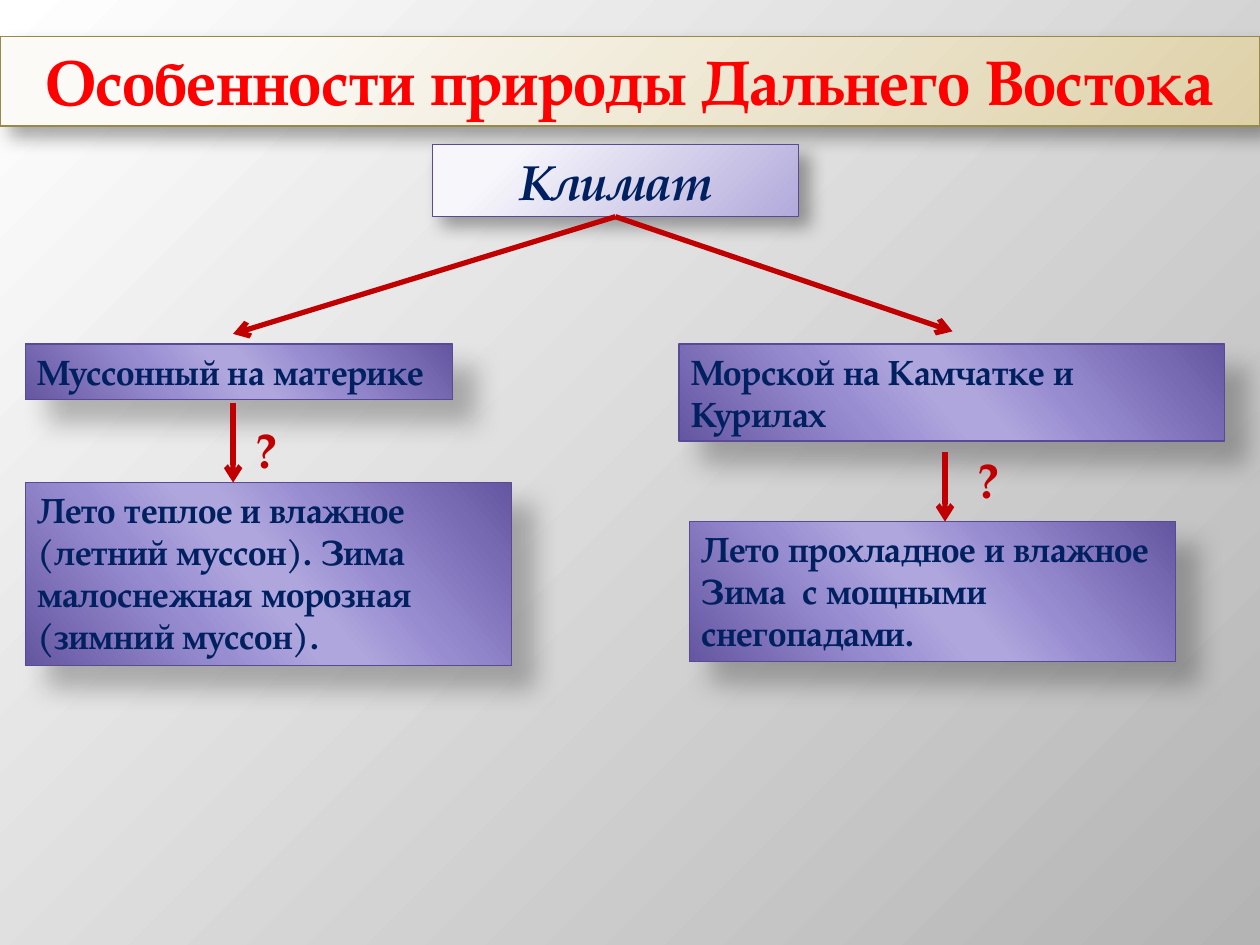
from lxml.etree import SubElement
from pptx import Presentation
from pptx.dml.color import RGBColor
from pptx.enum.shapes import MSO_CONNECTOR, MSO_SHAPE
from pptx.enum.text import MSO_ANCHOR, MSO_AUTO_SIZE, PP_ALIGN
from pptx.oxml.ns import qn
from pptx.util import Inches, Pt

FONT = "TeX Gyre Pagella"
RED = RGBColor(0xFF, 0x00, 0x00)
DARK_RED = RGBColor(0xC0, 0x00, 0x00)
NAVY = RGBColor(0x00, 0x20, 0x60)
GOLD = RGBColor(0x99, 0x89, 0x46)
VIOLET = RGBColor(0x5A, 0x4A, 0x96)
BLACK = RGBColor(0x00, 0x00, 0x00)
WHITE = RGBColor(0xFF, 0xFF, 0xFF)
GREY = RGBColor(0xB4, 0xB4, 0xB4)
CREAM = RGBColor(0xFB, 0xFA, 0xF6)
SAND = RGBColor(0xDE, 0xD1, 0xA8)
PALE_LILAC = RGBColor(0xF7, 0xF6, 0xFB)
LILAC = RGBColor(0xB2, 0xAA, 0xDB)
DEEP_VIOLET = RGBColor(0x65, 0x56, 0xA1)
LIGHT_VIOLET = RGBColor(0xAF, 0xA6, 0xDD)

BACKGROUND_STOPS = [(0, WHITE), (100, GREY)]
TITLE_STOPS = [(20, CREAM), (100, SAND)]
TOPIC_STOPS = [(20, PALE_LILAC), (100, LILAC)]
FACT_STOPS = [
    (0, DEEP_VIOLET), (33, RGBColor(0x98, 0x8C, 0xD1)), (47, LIGHT_VIOLET),
    (53, LIGHT_VIOLET), (68, RGBColor(0x99, 0x8D, 0xD2)), (100, DEEP_VIOLET),
]
FACT_ANGLE = 139

# Opacity in percent, blur and distance in points
SOFT_SHADOW = (35, 10.2, 8)
DEEP_SHADOW = (26, 15, 18)

FACTS = [
    ("Муссонный на материке", (0.2, 2.73, 3.39, 0.44)),
    ("Морской на Камчатке и Курилах", (5.39, 2.73, 4.33, 0.77)),
    ("Лето теплое и влажное (летний муссон). Зима малоснежная морозная "
     "(зимний муссон).", (0.2, 3.83, 3.86, 1.45)),
    ("Лето прохладное и влажное Зима  с мощными снегопадами.",
     (5.47, 4.14, 3.86, 1.11)),
]
BRANCH_ENDS = [(1.85, 2.65), (7.56, 2.63)]
TOPIC_BOTTOM = (4.88, 1.72)
DOWN_ARROWS = [((1.85, 3.2), (1.85, 3.83)), ((7.5, 3.59), (7.5, 4.14))]
QUESTIONS = [(1.93, 3.28), (7.66, 3.52)]


def add_xml(parent, tag, **attributes):
    return SubElement(parent, qn(tag),
                      {name: str(value) for name, value in attributes.items()})


def set_gradient(fill, properties, stops, angle=None, inset=0):
    """Fill linearly at an angle, or in circles from the top left corner.

    The inset, in percent, moves the centre of the circles off that corner.
    """
    fill.gradient()
    gradient = properties.find(qn("a:gradFill"))
    for child in list(gradient):
        gradient.remove(child)
    stop_list = add_xml(gradient, "a:gsLst")
    for position, color in stops:
        stop = add_xml(stop_list, "a:gs", pos=position * 1000)
        add_xml(stop, "a:srgbClr", val=color)
    if angle is not None:
        add_xml(gradient, "a:lin", ang=angle * 60000, scaled=0)
    else:
        near, far = inset * 1000, (100 - inset) * 1000
        circle = add_xml(gradient, "a:path", path="circle")
        add_xml(circle, "a:fillToRect", l=near, t=near, r=far, b=far)


def set_shadow(shape, opacity, blur, distance):
    shape.shadow.inherit = False
    effects = shape._element.spPr.find(qn("a:effectLst"))
    shadow = add_xml(effects, "a:outerShdw", blurRad=Pt(blur), dist=Pt(distance),
                     dir=45 * 60000, algn="tl", rotWithShape=0)
    color = add_xml(shadow, "a:srgbClr", val=BLACK)
    add_xml(color, "a:alpha", val=opacity * 1000)


def set_text(shape, text, size, color, align=PP_ALIGN.LEFT, italic=False,
             anchor=MSO_ANCHOR.TOP):
    frame = shape.text_frame
    frame_format = {
        "word_wrap": True, "auto_size": MSO_AUTO_SIZE.NONE,
        "vertical_anchor": anchor,
        "margin_left": Inches(0.1), "margin_right": Inches(0.1),
        "margin_top": Inches(0.05), "margin_bottom": Inches(0.05),
    }
    for name, value in frame_format.items():
        setattr(frame, name, value)
    paragraph = frame.paragraphs[0]
    paragraph.alignment = align
    run = paragraph.add_run()
    run.text = text
    font_format = {"name": FONT, "size": Pt(size), "bold": True, "italic": italic}
    for name, value in font_format.items():
        setattr(run.font, name, value)
    run.font.color.rgb = color


def style_panel(shape, stops, line_color, shadow, **gradient_format):
    set_gradient(shape.fill, shape._element.spPr, stops, **gradient_format)
    shape.line.color.rgb = line_color
    shape.line.width = Pt(0.75)
    set_shadow(shape, *shadow)


def add_title(slide, text):
    title = slide.shapes.title
    position = {"left": 0, "top": 0.29, "width": 10, "height": 0.71}
    for name, value in position.items():
        setattr(title, name, Inches(value))
    style_panel(title, TITLE_STOPS, GOLD, SOFT_SHADOW, inset=-15)
    set_text(title, text, 36, RED, PP_ALIGN.CENTER)


def add_box(slide, box):
    return slide.shapes.add_shape(MSO_SHAPE.RECTANGLE, *map(Inches, box))


def add_topic(slide, text, box):
    topic = add_box(slide, box)
    style_panel(topic, TOPIC_STOPS, VIOLET, SOFT_SHADOW, inset=-15)
    set_text(topic, text, 28, NAVY, PP_ALIGN.CENTER, italic=True)
    return topic


def add_fact(slide, text, box):
    fact = add_box(slide, box)
    style_panel(fact, FACT_STOPS, VIOLET, DEEP_SHADOW, angle=FACT_ANGLE)
    set_text(fact, text, 20, NAVY)


def add_arrow(slide, start, end):
    arrow = slide.shapes.add_connector(MSO_CONNECTOR.STRAIGHT,
                                       *map(Inches, start + end))
    arrow.line.color.rgb = DARK_RED
    arrow.line.width = Pt(3)
    add_xml(arrow.line._get_or_add_ln(), "a:tailEnd", type="arrow")
    add_xml(arrow._element.spPr, "a:effectLst")
    return arrow


def add_question(slide, left, top):
    question = slide.shapes.add_textbox(*map(Inches, (left, top, 0.31, 0.57)))
    set_text(question, "?", 28, DARK_RED)


def main():
    presentation = Presentation()
    presentation.slide_width = Inches(10)
    presentation.slide_height = Inches(7.5)
    slide = presentation.slides.add_slide(presentation.slide_layouts[5])

    background_fill = slide.background.fill
    background = slide._element.find(".//" + qn("p:bgPr"))
    set_gradient(background_fill, background, BACKGROUND_STOPS)

    add_title(slide, "Особенности природы Дальнего Востока")
    topic = add_topic(slide, "Климат", (3.43, 1.15, 2.91, 0.57))
    for end in BRANCH_ENDS:
        add_arrow(slide, TOPIC_BOTTOM, end).begin_connect(topic, 2)
    for text, box in FACTS:
        add_fact(slide, text, box)
    for start, end in DOWN_ARROWS:
        add_arrow(slide, start, end)
    for left, top in QUESTIONS:
        add_question(slide, left, top)

    presentation.save("out.pptx")


if __name__ == "__main__":
    main()
